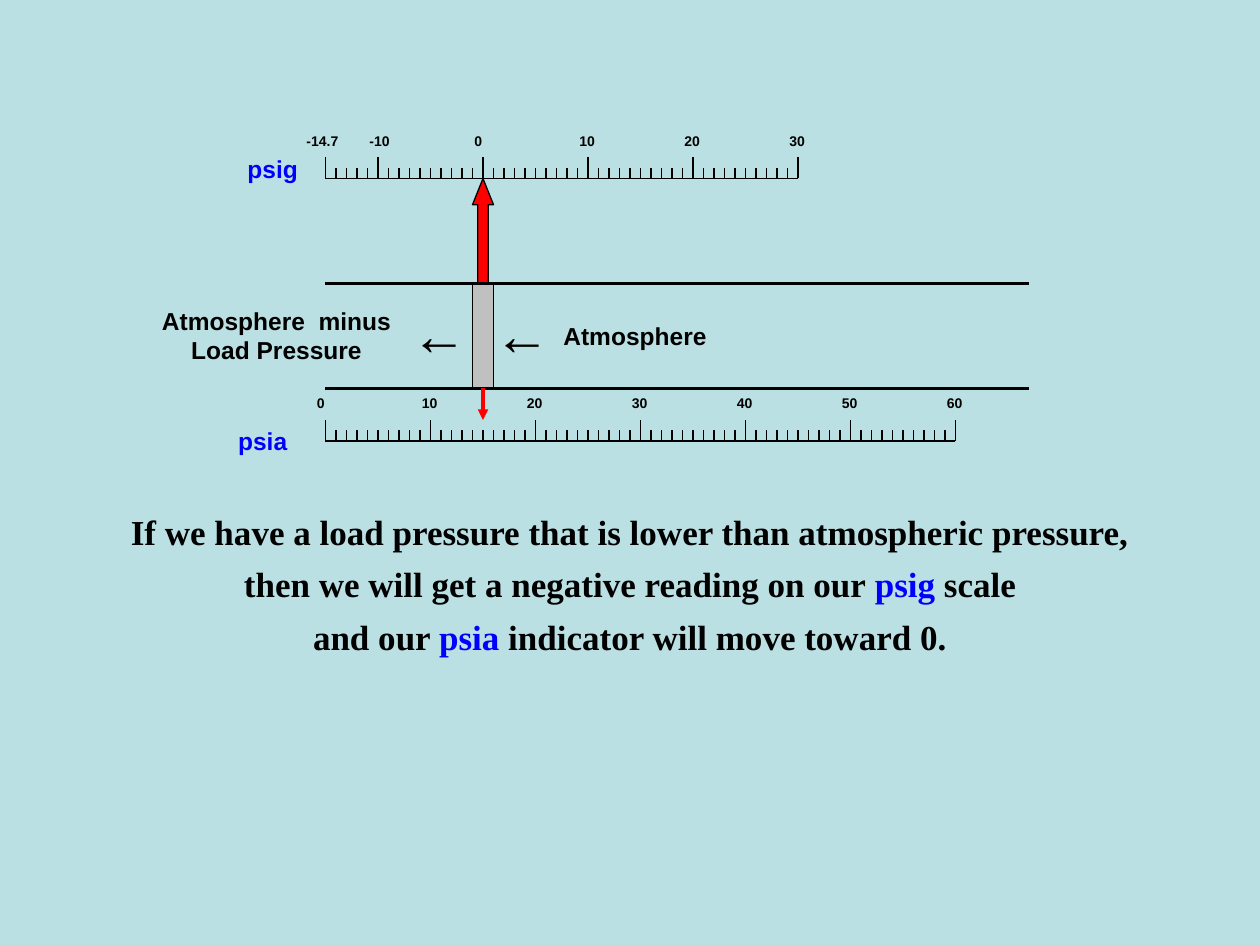
from lxml import etree
from pptx import Presentation
from pptx import util as u
from pptx.dml.color import RGBColor
from pptx.enum import shapes, text
from pptx.oxml import ns

HUES = {"back": "BBE0E3", "ink": "000000", "blue": "0000FF",
        "red": "FF0000", "grey": "C0C0C0"}
UNIT = 1 / 12  # inches per psi
LEFT = 31 * UNIT
RIGHT = 98 * UNIT
ZERO = 15  # psia value of 0 psig
MID = LEFT + ZERO * UNIT
TOP, BASE = 2.25, 37 * UNIT  # walls of the tube
ALIGN = {"l": text.PP_ALIGN.LEFT, "c": text.PP_ALIGN.CENTER,
         "r": text.PP_ALIGN.RIGHT}


def hue(name):
    return RGBColor.from_string(HUES[name])


def add_line(slide, start, end, width=0.75, color="ink", arrow=False):
    ends = [u.Inches(v) for v in (*start, *end)]
    line = slide.shapes.add_connector(shapes.MSO_CONNECTOR.STRAIGHT, *ends)
    line.line.width = u.Pt(width)
    line.line.color.rgb = hue(color)
    if arrow:
        tail = etree.SubElement(line.line._get_or_add_ln(), ns.qn("a:tailEnd"))
        tail.set("type", "triangle")
    etree.SubElement(line._element.spPr, ns.qn("a:effectLst"))


def add_block(slide, kind, box, color):
    block = slide.shapes.add_shape(kind, *[u.Inches(v) for v in box])
    block.shadow.inherit = False
    block.fill.solid()
    block.fill.fore_color.rgb = hue(color)
    block.line.color.rgb = hue("ink")
    block.line.width = u.Pt(0.75)
    return block


def add_text(slide, box, runs, size, align="l", font="Arial"):
    """Place one paragraph made of (words, color) runs."""
    area = slide.shapes.add_textbox(*[u.Inches(v) for v in box])
    frame = area.text_frame
    frame.word_wrap = True
    frame.auto_size = text.MSO_AUTO_SIZE.SHAPE_TO_FIT_TEXT
    para = frame.paragraphs[0]
    para.alignment = ALIGN[align]
    form = {"name": font, "size": u.Pt(size), "bold": True}
    for words, color in runs:
        run = para.add_run()
        run.text = words
        for key, value in form.items():
            setattr(run.font, key, value)
        run.font.color.rgb = hue(color)


def add_scale(slide, base, count, zero, marks):
    """Draw a ruler with a tick per psi and (label, width, shift) marks."""
    add_line(slide, (LEFT, base), (LEFT + count * UNIT, base))
    for step in range(count + 1):
        major = step == 0 or (step - zero) % 10 == 0
        x = LEFT + step * UNIT
        add_line(slide, (x, base - (2 if major else 1) * UNIT), (x, base))
    for label, width, shift in marks:
        step = max(0, int(float(label)) + zero) if label != "-14.7" else 0
        x = LEFT + (step - shift) * UNIT
        add_text(slide, (x, base - 5 * UNIT, width, 0.23),
                 [(label, "ink")], 8)


def add_tube(slide):
    """Draw the walls, the piston and both pointers."""
    add_block(slide, shapes.MSO_SHAPE.RECTANGLE,
              (MID - UNIT, TOP, 2 * UNIT, BASE - TOP), "grey")
    arrow = add_block(slide, shapes.MSO_SHAPE.UP_ARROW,
                      (MID - UNIT, TOP - 10 * UNIT, 2 * UNIT, 10 * UNIT), "red")
    arrow.adjustments[0], arrow.adjustments[1] = 0.5, 1.25
    for y in (TOP, BASE):
        add_line(slide, (LEFT, y), (RIGHT, y), 2)
    add_line(slide, (MID, BASE), (MID, BASE + 0.25), 2, "red", arrow=True)


def main():
    deck = Presentation()
    deck.slide_width, deck.slide_height = u.Inches(10), u.Inches(7.5)
    slide = deck.slides.add_slide(deck.slide_layouts[6])
    slide.background.fill.solid()
    slide.background.fill.fore_color.rgb = hue("back")

    add_tube(slide)
    tens = [(str(n), 0.33, 2) for n in range(10, 61, 10)]
    nil = ("0", 0.25, 2)
    add_scale(slide, 17 * UNIT, 45, ZERO,
              [("-14.7", 0.5, 3), ("-10", 0.42, 2), nil, *tens[:3]])
    add_scale(slide, 3.5, 60, 0, [nil, *tens])

    for box, words, color, size, align in (
            ((1.75, 1.17, 0.83, 0.33), "psig", "blue", 14, "c"),
            ((1.67, 3.33, 0.83, 0.33), "psia", "blue", 14, "c"),
            ((3.83, 2.5, 2.42, 0.33), "Atmosphere", "ink", 14, "c"),
            ((0.95, 2.38, 2.49, 0.57), "Atmosphere  minus Load Pressure",
             "ink", 14, "c"),
            ((3.83, 2.33, 2.42, 0.63), "←", "ink", 32, "l"),
            ((3.17, 2.33, 0.58, 0.63), "←", "ink", 32, "r")):
        add_text(slide, box, [(words, color)], size, align)

    notes = (
        [("If we have a load pressure that is lower than atmospheric pressure,",
          "ink")],
        [("then we will get a negative reading on our ", "ink"),
         ("psig", "blue"), (" scale", "ink")],
        [("and our ", "ink"), ("psia", "blue"),
         (" indicator will move toward 0.", "ink")])
    for row, runs in enumerate(notes):
        add_text(slide, (0, 4 + row * 5 * UNIT, 10, 0.43), runs, 20, "c",
                 "Times New Roman")
    deck.save("out.pptx")


if __name__ == "__main__":
    main()
